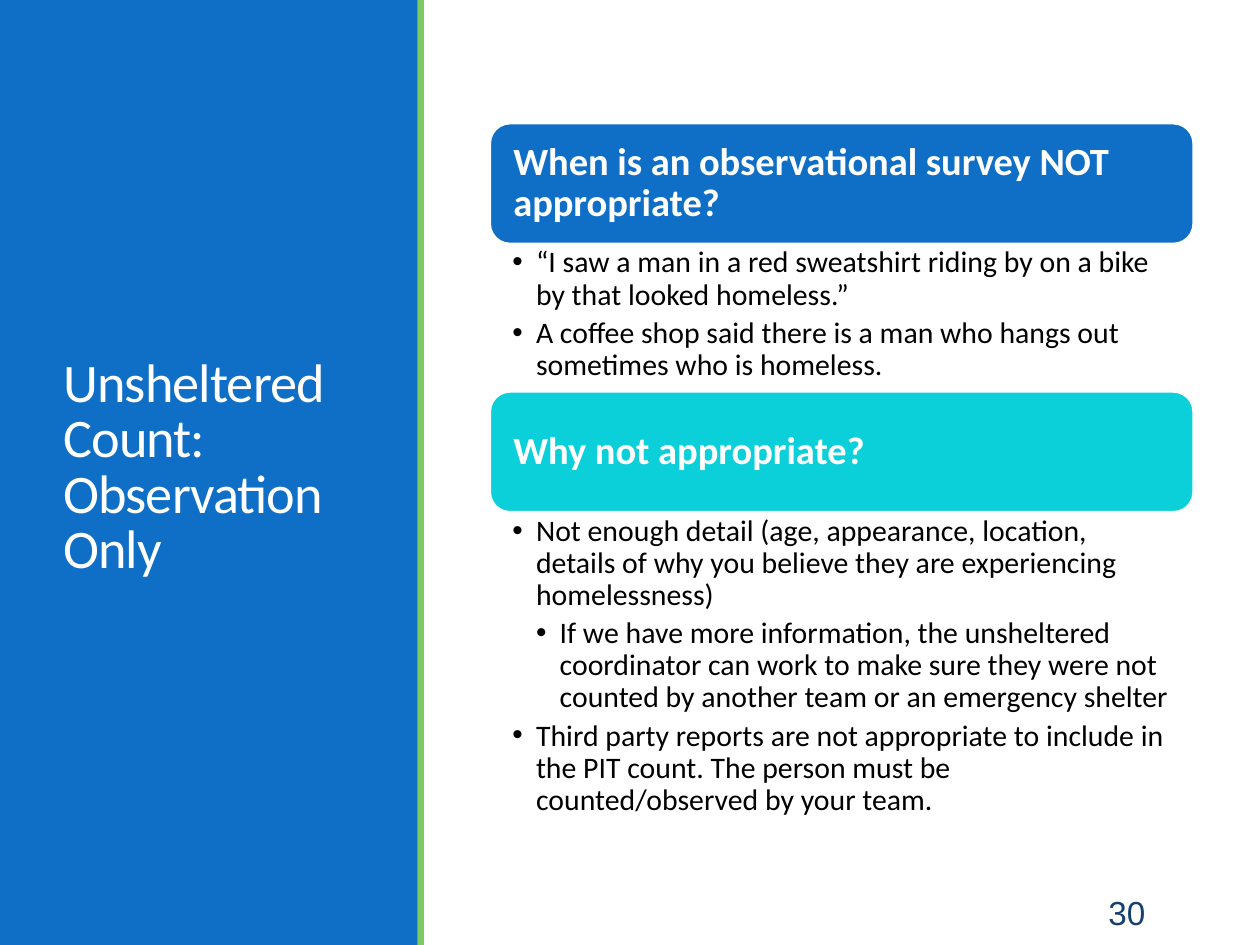
from lxml import etree
from pptx import Presentation
from pptx.dml.color import RGBColor
from pptx.enum.shapes import MSO_SHAPE
from pptx.enum.text import MSO_ANCHOR, MSO_AUTO_SIZE, PP_ALIGN
from pptx.oxml.ns import qn
from pptx.util import Pt

RECTANGLE, ROUNDED = MSO_SHAPE.RECTANGLE, MSO_SHAPE.ROUNDED_RECTANGLE
TOP, MIDDLE = MSO_ANCHOR.TOP, MSO_ANCHOR.MIDDLE
LEFT, RIGHT = PP_ALIGN.LEFT, PP_ALIGN.RIGHT

# Content
TITLE = "Unsheltered Count: Observation Only"
PAGE_NUMBER = "30"
SECTIONS = [  # heading, banner colour, list height, (level, text) items
    ("When is an observational survey NOT appropriate?", "blue", 84.5, [
        (0, "“I saw a man in a red sweatshirt riding by on a bike by that looked homeless.”"),
        (0, "A coffee shop said there is a man who hangs out sometimes who is homeless."),
    ]),
    ("Why not appropriate?", "cyan", 183, [
        (0, "Not enough detail (age, appearance, location, details of why you believe "
            "they are experiencing homelessness)"),
        (1, "If we have more information, the unsheltered coordinator can work to make "
            "sure they were not counted by another team or an emergency shelter"),
        (0, "Third party reports are not appropriate to include in the PIT count. "
            "The person must be counted/observed by your team."),
    ]),
]

# Look
COLORS = {"blue": "0F6FC6", "green": "7CCA62", "cyan": "0BD0D9",
          "navy": "17406D", "white": "FFFFFF", "black": "000000"}
FORMATS = {
    "title": {"size": Pt(31), "name": "Calibri", "bold": False, "color": "white"},
    "heading": {"size": Pt(22), "name": "Calibri", "bold": True, "color": "white"},
    "item": {"size": Pt(17), "name": "Calibri", "bold": False, "color": "black"},
    "number": {"size": Pt(19), "name": "Arial", "bold": False, "color": "navy"},
}
PAGE_WIDTH, PAGE_HEIGHT = 720, 540
PANEL_WIDTH = 238.8
COLUMN_LEFT, COLUMN_TOP, COLUMN_WIDTH = 280, 70.5, 402
BANNER_HEIGHT = 68.8
INDENT = 13.5


def rgb(name):
    return RGBColor.from_string(COLORS[name])


def place(shape, left, top, width, height):
    shape.left, shape.top, shape.width, shape.height = map(Pt, (left, top, width, height))


def set_frame(shape, anchor, insets):
    frame = shape.text_frame
    frame.word_wrap = True
    frame.auto_size = MSO_AUTO_SIZE.NONE
    frame.vertical_anchor = anchor
    for side, inset in zip(("left", "top", "right", "bottom"), insets):
        setattr(frame, "margin_" + side, Pt(inset))
    return frame


def write(para, text, style, align=LEFT, line_spacing=0.9, space_after=0):
    para.alignment = align
    para.line_spacing = line_spacing
    para.space_before, para.space_after = Pt(0), Pt(space_after)
    span = para.add_run()
    span.text = text
    for key, value in FORMATS[style].items():
        if key == "color":
            span.font.color.rgb = rgb(value)
        else:
            setattr(span.font, key, value)
    return span


def add_bullet(para, level):
    para.level = level
    props = para._p.get_or_add_pPr()
    props.set("marL", str(Pt(INDENT * (level + 1))))
    props.set("indent", str(Pt(-INDENT)))
    etree.SubElement(props, qn("a:buFont")).set("typeface", "Arial")
    etree.SubElement(props, qn("a:buChar")).set("char", "•")


def add_block(page, preset, box, color):
    shape = page.shapes.add_shape(preset, *map(Pt, box))
    shape.shadow.inherit = False
    shape.fill.solid()
    shape.fill.fore_color.rgb = rgb(color)
    shape.line.fill.background()
    return shape


def main():
    deck = Presentation()
    deck.slide_width, deck.slide_height = Pt(PAGE_WIDTH), Pt(PAGE_HEIGHT)
    two_content = deck.slide_layouts[3]
    page = deck.slides.add_slide(two_content)
    title, *bodies = page.placeholders

    # Side panel behind the title, with its green edge
    side_blocks = [((0, 0, PANEL_WIDTH, PAGE_HEIGHT), "blue"),
                   ((238.5, 0, 3.8, PAGE_HEIGHT), "green")]
    for depth, (box, color) in enumerate(side_blocks, start=2):
        block = add_block(page, RECTANGLE, box, color)
        page.shapes._spTree.insert(depth, block._element)

    # Title
    place(title, 29, 41, 182, 454)
    frame = set_frame(title, MIDDLE, (7.2, 3.6, 7.2, 3.6))
    span = write(frame.paragraphs[0], TITLE, "title", line_spacing=0.85)
    span.font._element.set("spc", "-50")

    # Banners, each with its list below
    top = COLUMN_TOP
    for body, (heading, color, list_height, items) in zip(bodies, SECTIONS):
        banner = add_block(page, ROUNDED, (COLUMN_LEFT, top, COLUMN_WIDTH, BANNER_HEIGHT), color)
        banner.line.color.rgb = rgb("white")
        banner.line.width = Pt(1.25)
        frame = set_frame(banner, MIDDLE, (10, 10, 10, 10))
        write(frame.paragraphs[0], heading, "heading")
        top += BANNER_HEIGHT

        place(body, COLUMN_LEFT, top, COLUMN_WIDTH, list_height)
        frame = set_frame(body, TOP, (12.8, 2, 12, 2))
        for index, (level, text) in enumerate(items):
            para = frame.add_paragraph() if index else frame.paragraphs[0]
            write(para, text, "item", space_after=3.4)
            add_bullet(para, level)
        top += list_height

    # Page number
    number = page.shapes.add_textbox(*map(Pt, (597.6, 508.3, 64, 28.8)))
    frame = set_frame(number, MIDDLE, (7.2, 3.6, 7.2, 3.6))
    write(frame.paragraphs[0], PAGE_NUMBER, "number", align=RIGHT)

    deck.save("out.pptx")


if __name__ == "__main__":
    main()
